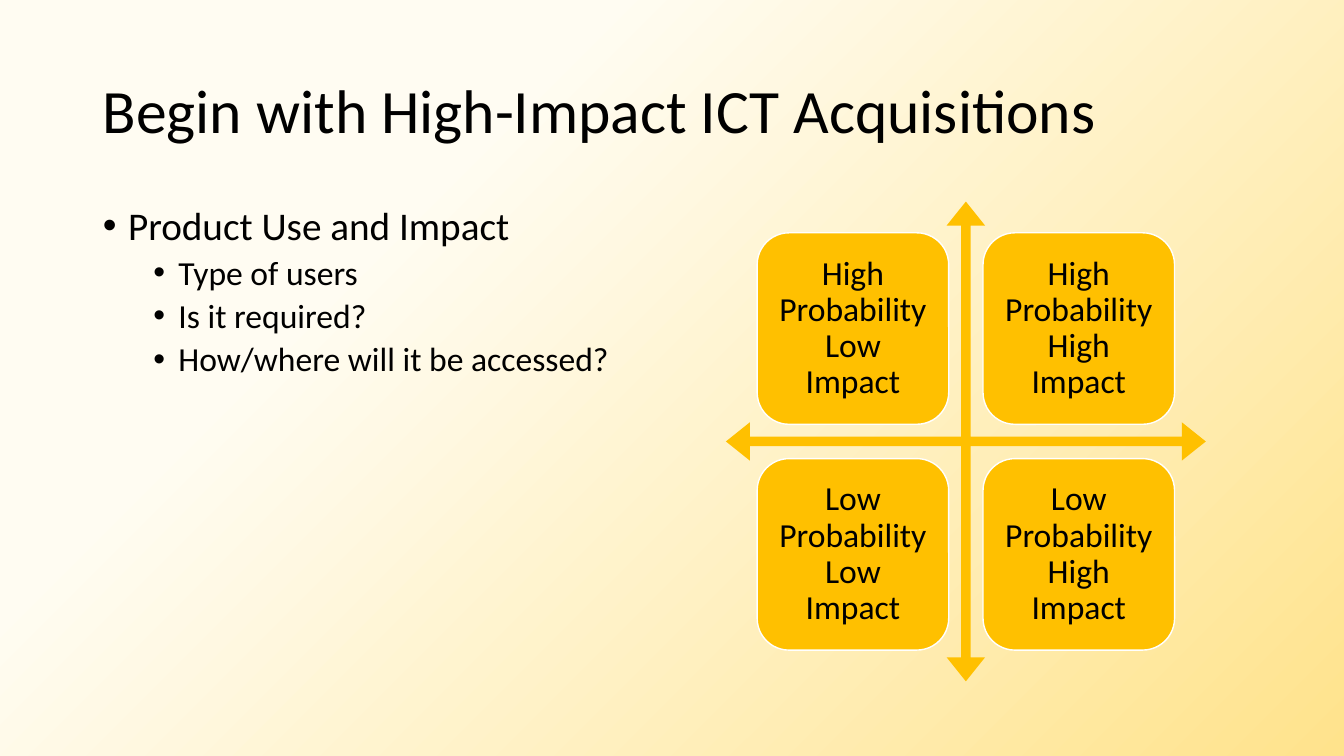
from lxml.etree import SubElement
from pptx import Presentation
from pptx.dml.color import RGBColor
from pptx.enum.shapes import MSO_SHAPE
from pptx.enum.text import MSO_ANCHOR, MSO_AUTO_SIZE, PP_ALIGN
from pptx.oxml.ns import qn
from pptx.util import Inches, Pt

TITLE = "Begin with High-Impact ICT Acquisitions"
BULLETS = [
    (0, "Product Use and Impact"),
    (1, "Type of users"),
    (1, "Is it required?"),
    (1, "How/where will it be accessed?"),
]
LEVELS = [
    {"size": 28, "before": 10, "indent": 0.25},
    {"size": 24, "before": 5, "indent": 0.75},
]
QUADRANTS = [
    ["High Probability Low Impact", "High Probability High Impact"],
    ["Low Probability Low Impact", "Low Probability High Impact"],
]
COLORS = {"text": "000000", "gold": "FFC000", "outline": "FFFFFF",
          "cream": "FFFCF2", "amber": "FFE38C"}
FONT = "Calibri"
MATRIX_LEFT, MATRIX_TOP, MATRIX_SIZE = 7.2, 2, 4.76
TILE_SIZE, TILE_MARGIN = 1.9, 0.31
TILE_STEP = MATRIX_SIZE - 2 * TILE_MARGIN - TILE_SIZE


def color(name):
    return RGBColor.from_string(COLORS[name])


def write(para, text, size, align=PP_ALIGN.LEFT, before=0, after=0, level=0, indent=None):
    para.alignment = align
    para.level = level
    para.line_spacing = 0.9
    para.space_before, para.space_after = Pt(before), Pt(after)
    span = para.add_run()
    span.text = text
    span.font.name, span.font.size = FONT, Pt(size)
    span.font.color.rgb = color("text")
    if indent is not None:
        properties = para._p.get_or_add_pPr()
        properties.set("marL", str(Inches(indent)))
        properties.set("indent", str(Inches(-0.25)))
        SubElement(properties, qn("a:buFont")).set("typeface", "Arial")
        SubElement(properties, qn("a:buChar")).set("char", "•")


def place(box, left, top, width, height):
    box.left, box.top = Inches(left), Inches(top)
    box.width, box.height = Inches(width), Inches(height)
    box.text_frame.auto_size = MSO_AUTO_SIZE.NONE


def add_gold_shape(page, kind, left, top, size, adjustments=()):
    shape = page.shapes.add_shape(kind, Inches(left), Inches(top), Inches(size), Inches(size))
    shape.shadow.inherit = False
    shape.fill.solid()
    shape.fill.fore_color.rgb = color("gold")
    shape.line.fill.background()
    for index, value in enumerate(adjustments):
        shape.adjustments[index] = value
    return shape


def add_tile(page, row, column, text):
    tile = add_gold_shape(page, MSO_SHAPE.ROUNDED_RECTANGLE,
                          MATRIX_LEFT + TILE_MARGIN + column * TILE_STEP,
                          MATRIX_TOP + TILE_MARGIN + row * TILE_STEP, TILE_SIZE)
    tile.line.color.rgb = color("outline")
    tile.line.width = Pt(1)
    frame = tile.text_frame
    frame.word_wrap = True
    frame.vertical_anchor = MSO_ANCHOR.MIDDLE
    frame.margin_left = frame.margin_right = Inches(0.1)
    frame.margin_top = frame.margin_bottom = Inches(0.1)
    write(frame.paragraphs[0], text, 24, align=PP_ALIGN.CENTER)


def main():
    deck = Presentation()
    deck.slide_width, deck.slide_height = Inches(13.33), Inches(7.5)
    page = deck.slides.add_slide(deck.slide_layouts[1])

    backdrop = page.background.fill
    backdrop.gradient()
    backdrop.gradient_angle = 315
    for stop, position, name in zip(backdrop.gradient_stops, (0.29, 1), ("cream", "amber")):
        stop.position = position
        stop.color.rgb = color(name)

    title, body = page.placeholders
    place(title, 0.92, 0.4, 11.5, 1.45)
    title.text_frame.vertical_anchor = MSO_ANCHOR.MIDDLE
    write(title.text_frame.paragraphs[0], TITLE, 44)

    place(body, 0.92, 2, 5.67, 4.76)
    frame = body.text_frame
    for index, (level, text) in enumerate(BULLETS):
        para = frame.add_paragraph() if index else frame.paragraphs[0]
        write(para, text, level=level, **LEVELS[level])

    add_gold_shape(page, MSO_SHAPE.QUAD_ARROW, MATRIX_LEFT, MATRIX_TOP, MATRIX_SIZE,
                   (0.02, 0.04, 0.05))
    for row, labels in enumerate(QUADRANTS):
        for column, text in enumerate(labels):
            add_tile(page, row, column, text)

    deck.save("out.pptx")


if __name__ == "__main__":
    main()
